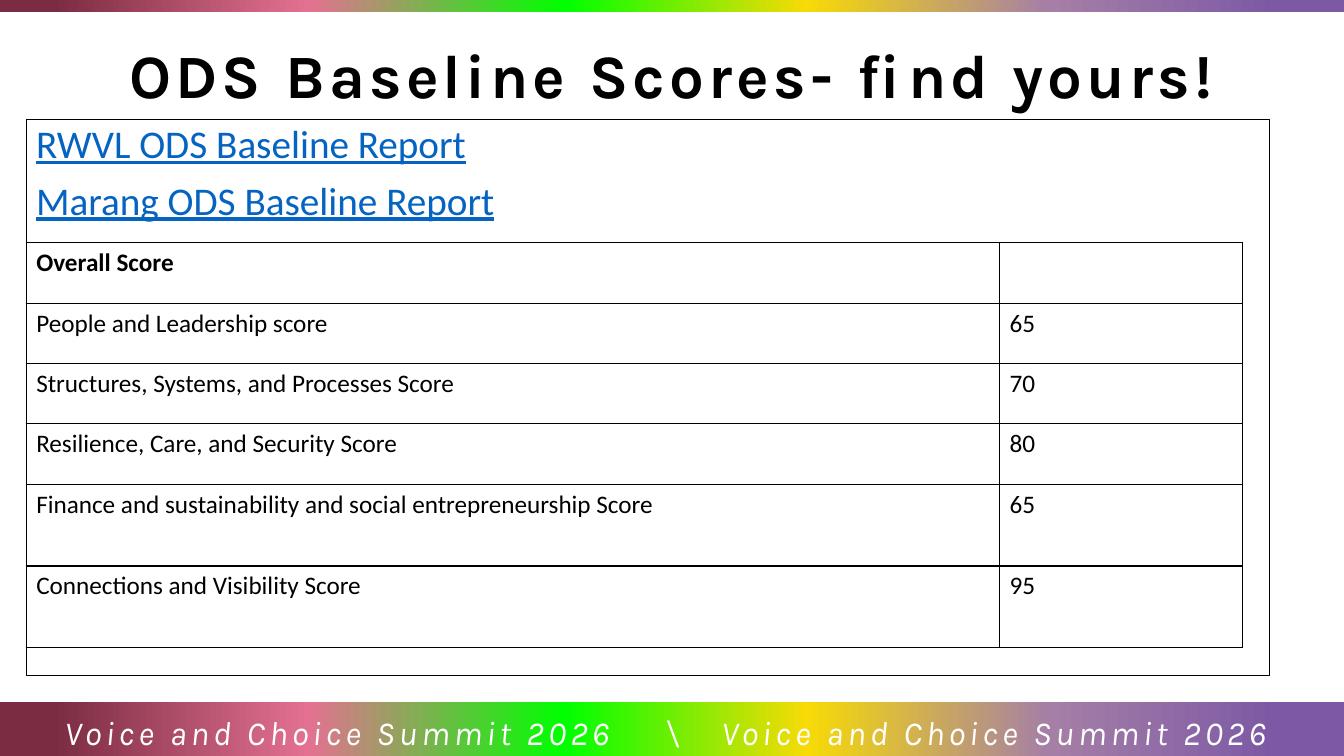
from lxml.etree import SubElement
from pptx import Presentation
from pptx.dml.color import RGBColor
from pptx.enum.shapes import MSO_SHAPE
from pptx.enum.text import MSO_ANCHOR, MSO_AUTO_SIZE, PP_ALIGN
from pptx.oxml.ns import qn
from pptx.util import Cm, Pt

TITLE = "ODS Baseline Scores- find yours!"
EVENT = "Voice and Choice Summit 2026"
FOOTER = f"{EVENT}\t\\\t{EVENT}"
REPORTS = ["RWVL ODS Baseline Report", "Marang ODS Baseline Report"]
SCORES = [
    ("Overall Score", ""),
    ("People and Leadership score", "65"),
    ("Structures, Systems, and Processes Score", "70"),
    ("Resilience, Care, and Security Score", "80"),
    ("Finance and sustainability and social entrepreneurship Score", "65"),
    ("Connections and Visibility Score", "95"),
]
COLORS = {"ink": "000000", "paper": "FFFFFF", "link": "0563C1"}
RAINBOW = [(5, "7D59A5"), (22, "A57FA6"), (40, "F7DA06"),
           (58, "00FF00"), (77, "E37191"), (96, "7B2C42")]
WIDTH, HEIGHT = Cm(33.87), Cm(19.05)
LEFT = Cm(0.66)
COLS = [Cm(24.53), Cm(6.13)]
ROWS = [Cm(1.52)] * 4 + [Cm(2.06)] * 2
TABS = [Cm(15.1), Cm(16.55)]


def rgb(name):
    return RGBColor.from_string(COLORS[name])


def style(para, size, face, color, bold=False, italic=False, line=False):
    for run in para.runs:
        font = run.font
        font.size, font.name = Pt(size), face
        font.bold, font.italic, font.underline = bold, italic, line
        font.color.rgb = rgb(color)


def track(para):
    """Space the letters of a paragraph by three points."""
    for run in para.runs:
        run.font._element.set("spc", "300")


def solid(parent, color):
    fill = SubElement(parent, qn("a:solidFill"))
    SubElement(fill, qn("a:srgbClr"), val=COLORS[color])


def add_band(slide, top, height):
    band = slide.shapes.add_shape(MSO_SHAPE.RECTANGLE, 0, top, WIDTH, height)
    band.shadow.inherit = False
    band.line.fill.background()
    band.fill.gradient()
    band.fill.gradient_angle = 180
    stops = next(band._element.iter(qn("a:gsLst")))
    for old in list(stops):
        stops.remove(old)
    for pos, color in RAINBOW:
        stop = SubElement(stops, qn("a:gs"), pos=str(pos * 1000))
        SubElement(stop, qn("a:srgbClr"), val=color)


def add_title(slide):
    title = slide.shapes.title
    title.left, title.top = 0, Cm(0.69)
    title.width, title.height = WIDTH, Cm(2.34)
    frame = title.text_frame
    frame.text = TITLE
    frame.word_wrap = True
    frame.auto_size = MSO_AUTO_SIZE.NONE
    frame.vertical_anchor = MSO_ANCHOR.MIDDLE
    para = frame.paragraphs[0]
    para.alignment = PP_ALIGN.CENTER
    style(para, 44, "Karla", "ink", bold=True)
    track(para)
    props = para.runs[0].font._element
    edge = SubElement(props, qn("a:ln"), w="9525")
    solid(edge, "ink")
    props.insert(0, edge)


def add_footer(slide):
    box = slide.shapes.add_textbox(0, Cm(17.75), WIDTH, Cm(1.25))
    frame = box.text_frame
    frame.text = FOOTER
    frame.word_wrap = True
    frame.margin_left, frame.margin_right = Cm(1.63), 0
    para = frame.paragraphs[0]
    para.line_spacing = 1.07
    stops = SubElement(para._p.get_or_add_pPr(), qn("a:tabLst"))
    for pos in TABS:
        SubElement(stops, qn("a:tab"), pos=str(pos), algn="l")
    style(para, 24, "Karla", "paper", italic=True)
    track(para)


def add_reports(slide):
    box = slide.shapes.add_textbox(LEFT, Cm(3.02), Cm(31.34), Cm(14))
    box.line.color.rgb = rgb("ink")
    box.line.width = Pt(0.75)
    frame = box.text_frame
    frame.word_wrap = True
    frame.text = "\n".join(REPORTS)
    for i, para in enumerate(frame.paragraphs):
        para.line_spacing = 0.9
        para.space_before = Pt(10 if i else 0)
        style(para, 28, "Calibri", "link", line=True)


def frame_cell(cell):
    cell.fill.solid()
    cell.fill.fore_color.rgb = rgb("paper")
    props = cell._tc.get_or_add_tcPr()
    for i, side in enumerate(("lnL", "lnR", "lnT", "lnB")):
        edge = SubElement(props, qn(f"a:{side}"), w="12700")
        solid(edge, "ink")
        props.insert(i, edge)


def add_scores(slide):
    table = slide.shapes.add_table(len(ROWS), len(COLS), LEFT, Cm(6.12),
                                   sum(COLS), sum(ROWS)).table
    table.first_row = table.horz_banding = False
    for col, width in zip(table.columns, COLS):
        col.width = width
    for i, (row, height) in enumerate(zip(table.rows, ROWS)):
        row.height = height
        for cell, text in zip(row.cells, SCORES[i]):
            cell.text = text
            style(cell.text_frame.paragraphs[0], 18, "Calibri", "ink",
                  bold=i == 0)
            frame_cell(cell)


def main():
    deck = Presentation()
    deck.slide_width, deck.slide_height = WIDTH, HEIGHT
    slide = deck.slides.add_slide(deck.slide_layouts[5])
    add_band(slide, 0, Cm(0.3))
    add_band(slide, Cm(17.68), Cm(1.45))
    add_title(slide)
    add_footer(slide)
    add_reports(slide)
    add_scores(slide)
    deck.save("out.pptx")


if __name__ == "__main__":
    main()
